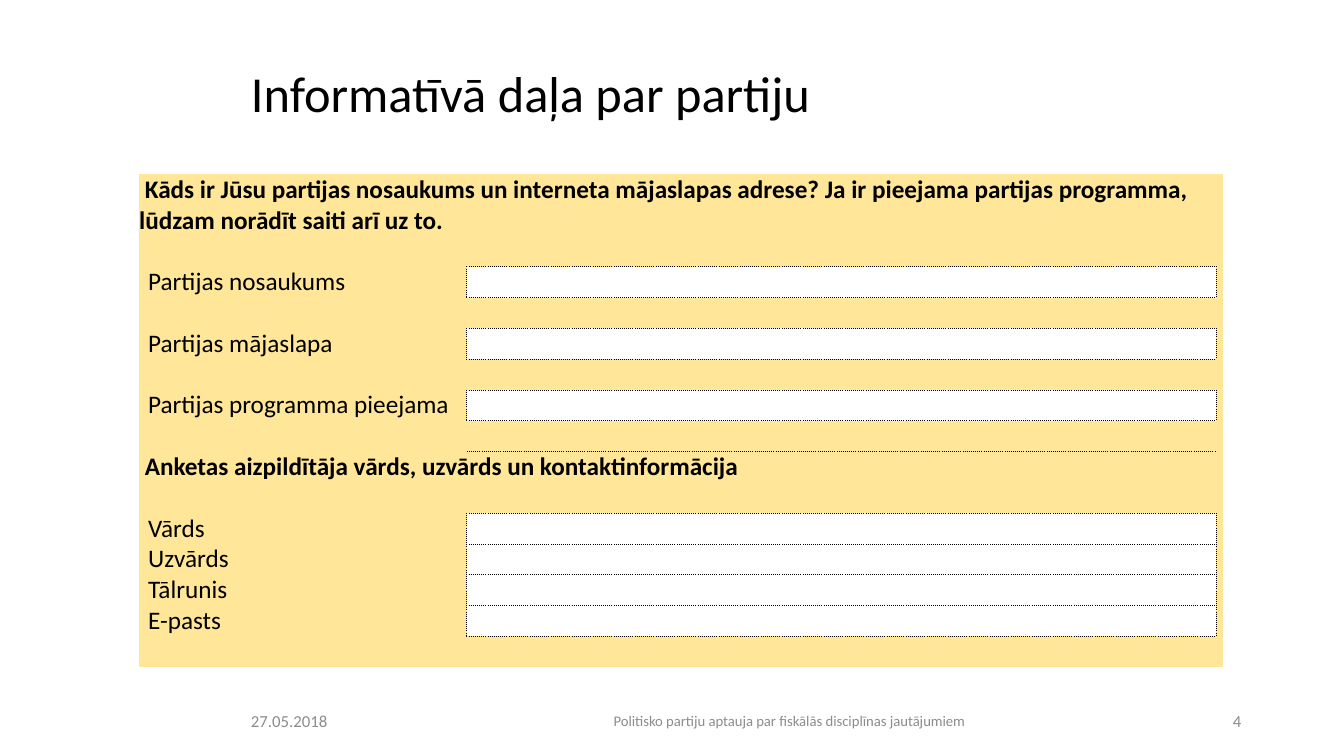
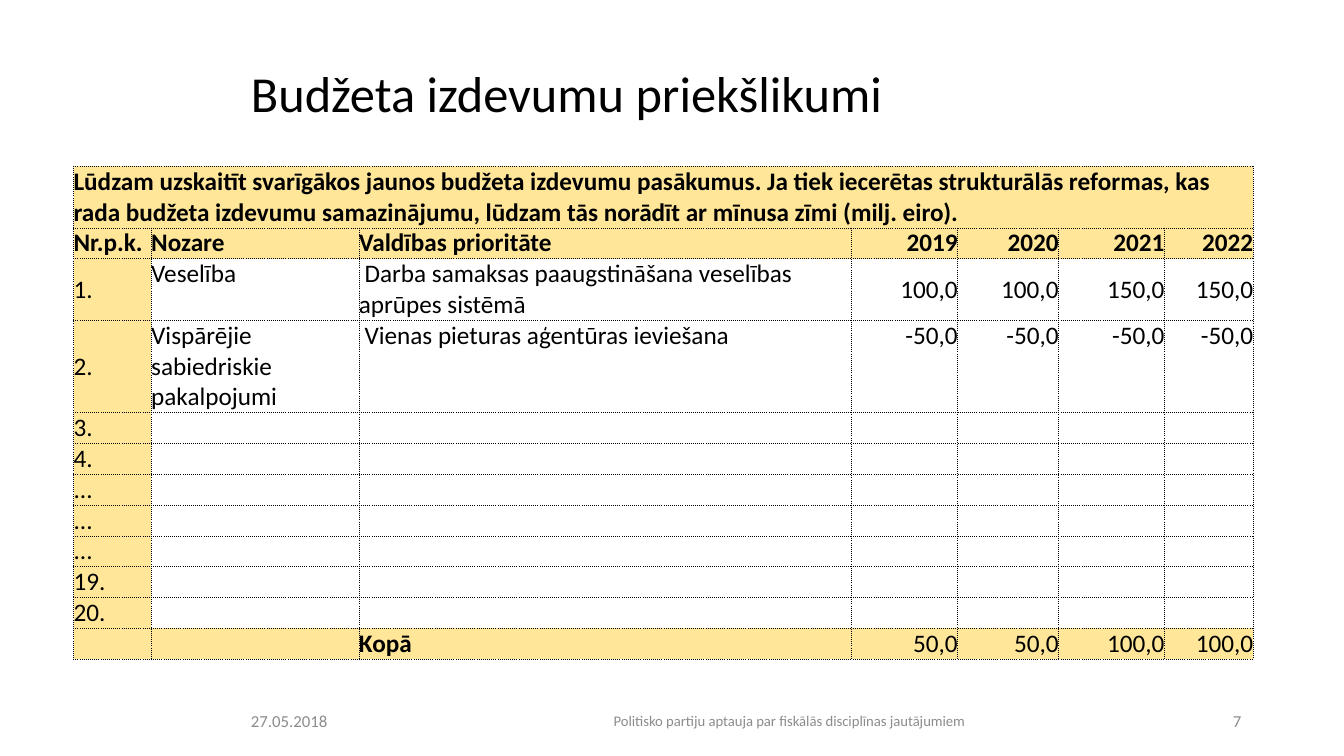
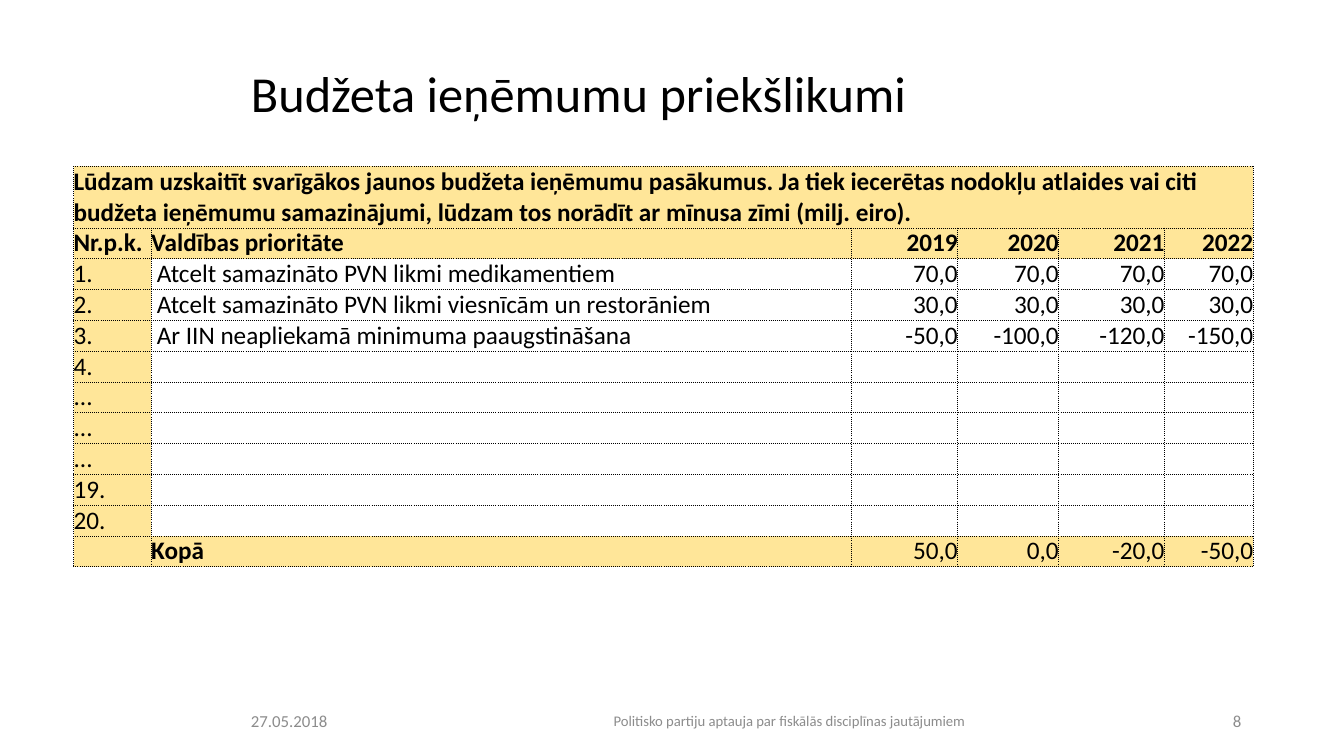
import pptx
import pptx.util
import pptx.dml.color
import pptx.enum.text
import pptx.oxml
import pptx.oxml.ns

Inches, Pt = pptx.util.Inches, pptx.util.Pt
ALIGN, ANCHOR = pptx.enum.text.PP_ALIGN, pptx.enum.text.MSO_ANCHOR

# Shared look
FONT, INK, GREY, SAND = "Calibri", "000000", "8C8C8C", "FFE699"
LINE = Pt(22)  # height of one line of table text
NO_STYLE = "{2D5ABB26-0587-4C30-8999-92F81FD0307C}"
SIDES = {"L": (0, -1), "R": (0, 1), "T": (-1, 0), "B": (1, 0)}
DATE = "27.05.2018"
FOOTER = "Politisko partiju aptauja par fiskālās disciplīnas jautājumiem"

# Form rows: (kind, text, lines)
FORM_TITLE = "Informatīvā daļa par partiju"
FORM_COLS = [3.25, 7.43, 0.07]
GAP = ("gap", "", 1)
FORM_ROWS = [
    ("heading", " Kāds ir Jūsu partijas nosaukums un interneta mājaslapas adrese? "
     "Ja ir pieejama partijas programma, lūdzam norādīt saiti arī uz to.", 2),
    GAP, ("field", "Partijas nosaukums", 1),
    GAP, ("field", "Partijas mājaslapa", 1),
    GAP, ("field", "Partijas programma pieejama", 1),
    GAP, ("heading", " Anketas aizpildītāja vārds, uzvārds un kontaktinformācija", 1),
    GAP, ("field", "Vārds", 1), ("field", "Uzvārds", 1),
    ("field", "Tālrunis", 1), ("field", "E-pasts", 1), GAP,
]

# Budget tables; items: (labels, yearly amounts, anchor of amounts, lines)
YEARS = ["2019", "2020", "2021", "2022"]
YEAR_COLS = [1.06, 1, 1.05, 0.88]
NUMBER_COL = 0.77
NUMBERS = ["1.", "2.", "3.", "4.", "...", "...", "...", "19.", "20."]
BUDGETS = [
    dict(
        title="Budžeta izdevumu priekšlikumi", page=7,
        question="Lūdzam uzskaitīt svarīgākos jaunos budžeta izdevumu pasākumus. "
                 "Ja tiek iecerētas strukturālās reformas, kas rada budžeta izdevumu "
                 "samazinājumu, lūdzam tās norādīt ar mīnusa zīmi (milj. eiro).",
        labels=["Nozare", "Valdības prioritāte"], label_cols=[2.06, 4.88],
        items=[
            (["Veselība", " Darba samaksas paaugstināšana veselības aprūpes sistēmā"],
             [100, 100, 150, 150], ANCHOR.MIDDLE, 2),
            (["Vispārējie sabiedriskie pakalpojumi", " Vienas pieturas aģentūras ieviešana"],
             [-50, -50, -50, -50], ANCHOR.TOP, 3),
        ]),
    dict(
        title="Budžeta ieņēmumu priekšlikumi", page=8,
        question="Lūdzam uzskaitīt svarīgākos jaunos budžeta ieņēmumu pasākumus. "
                 "Ja tiek iecerētas nodokļu atlaides vai citi budžeta ieņēmumu "
                 "samazinājumi, lūdzam tos norādīt ar mīnusa zīmi (milj. eiro).",
        labels=["Valdības prioritāte"], label_cols=[6.94],
        items=[
            ([" Atcelt samazināto PVN likmi medikamentiem"], [70, 70, 70, 70], ANCHOR.MIDDLE, 1),
            ([" Atcelt samazināto PVN likmi viesnīcām un restorāniem"], [30, 30, 30, 30],
             ANCHOR.MIDDLE, 1),
            ([" Ar IIN neapliekamā minimuma paaugstināšana"], [-50, -100, -120, -150],
             ANCHOR.MIDDLE, 1),
        ]),
]


def rgb(color):
    return pptx.dml.color.RGBColor.from_string(color)


def style(p, size, color=INK, bold=False, align=ALIGN.LEFT):
    p.alignment = align
    p.font.name, p.font.size, p.font.bold = FONT, Pt(size), bold
    p.font.color.rgb = rgb(color)


def add_text(s, box, text, size, color=INK, align=ALIGN.LEFT):
    tf = s.shapes.add_textbox(*map(Inches, box)).text_frame
    tf.word_wrap, tf.vertical_anchor = True, ANCHOR.MIDDLE
    p = tf.paragraphs[0]
    p.text = text
    style(p, size, color, align=align)
    return p


def new_slide(prs, title, page):
    s = prs.slides.add_slide(prs.slide_layouts[6])
    add_text(s, (2.39, 0.4, 10.02, 1.11), title, 36).line_spacing = 0.9
    add_text(s, (2.39, 6.95, 1.64, 0.4), DATE, 12, GREY)
    add_text(s, (4.31, 6.95, 7.04, 0.4), FOOTER, 10.5, GREY, ALIGN.CENTER)
    add_text(s, (11.62, 6.95, 0.79, 0.4), str(page), 12, GREY, ALIGN.RIGHT)
    return s


def new_table(s, left, top, cols, lines):
    frame = s.shapes.add_table(len(lines), len(cols), Inches(left), Inches(top),
                               Inches(sum(cols)), LINE * sum(lines))
    frame.element.find(".//" + pptx.oxml.ns.qn("a:tableStyleId")).text = NO_STYLE
    table = frame.table
    table.first_row = table.horz_banding = False
    for column, width in zip(table.columns, cols):
        column.width = Inches(width)
    for row, count in zip(table.rows, lines):
        row.height = LINE * count
    return table


def set_cell(cell, text="", filled=True, sides="LRTB", bold=False, align=ALIGN.LEFT,
             anchor=ANCHOR.MIDDLE, indent=0):
    cell.margin_left = Inches(indent)
    cell.margin_right = cell.margin_top = cell.margin_bottom = 0
    cell.vertical_anchor = anchor
    cell.text = text
    style(cell.text_frame.paragraphs[0], 18, bold=bold, align=align)
    if filled:
        cell.fill.solid()
        cell.fill.fore_color.rgb = rgb(SAND)
    else:
        cell.fill.background()
    # Dotted borders go before the fill
    tc_pr = cell._tc.get_or_add_tcPr()
    for i, side in enumerate(sides):
        tc_pr.insert(i, pptx.oxml.parse_xml(
            f'<a:ln{side} {pptx.oxml.ns.nsdecls("a")} w="{Pt(0.5)}"><a:solidFill>'
            f'<a:srgbClr val="{INK}"/></a:solidFill><a:prstDash val="sysDot"/></a:ln{side}>'))


def form_slide(prs):
    s = new_slide(prs, FORM_TITLE, 4)
    table = new_table(s, 1.38, 1.73, FORM_COLS, [lines for _, _, lines in FORM_ROWS])
    fields = {(r, 1) for r, row in enumerate(FORM_ROWS) if row[0] == "field"}
    for r, (kind, text, _) in enumerate(FORM_ROWS):
        heading = kind == "heading"
        for c in range(len(FORM_COLS)):
            # A side is drawn where this cell or its neighbour is a field
            sides = [side for side, (dr, dc) in SIDES.items()
                     if fields & {(r, c), (r + dr, c + dc)}]
            set_cell(table.cell(r, c), text if c == 0 else "", (r, c) not in fields, sides,
                     bold=heading, indent=0.09 if kind == "field" and c == 0 else 0)
        if heading:
            table.cell(r, 0).merge(table.cell(r, len(FORM_COLS) - 1))


def amount(value):
    return f"{value:.1f}".replace(".", ",")


def budget_slide(prs, title, page, question, labels, label_cols, items):
    s = new_slide(prs, title, page)
    cols = [NUMBER_COL] + label_cols + YEAR_COLS
    first_year = 1 + len(labels)
    blank = ([""] * len(labels), [], ANCHOR.MIDDLE, 1)
    body = items + [blank] * (len(NUMBERS) - len(items))
    table = new_table(s, 0.73, 1.65, cols, [2, 1] + [item[3] for item in body] + [1])

    # Question and header
    for c, text in enumerate(["Nr.p.k."] + labels + YEARS):
        set_cell(table.cell(0, c), question if c == 0 else "", bold=True)
        set_cell(table.cell(1, c), text, bold=True,
                 align=ALIGN.RIGHT if c >= first_year else ALIGN.LEFT)
    table.cell(0, 0).merge(table.cell(0, len(cols) - 1))

    # Numbered measures
    for r, (number, (names, values, anchor, _)) in enumerate(zip(NUMBERS, body), 2):
        set_cell(table.cell(r, 0), number)
        for c, name in enumerate(names, 1):
            set_cell(table.cell(r, c), name, False, anchor=ANCHOR.TOP)
        for c, text in enumerate(map(amount, values) if values else [""] * len(YEARS), first_year):
            set_cell(table.cell(r, c), text, False, align=ALIGN.RIGHT, anchor=anchor)

    # Totals
    last = len(body) + 2
    for c in range(first_year):
        set_cell(table.cell(last, c), "Kopā" if c == first_year - 1 else "", bold=True)
    for c, values in enumerate(zip(*(item[1] for item in items)), first_year):
        set_cell(table.cell(last, c), amount(sum(values)), align=ALIGN.RIGHT)


def main():
    prs = pptx.Presentation()
    prs.slide_width, prs.slide_height = Inches(13.33), Inches(7.5)
    form_slide(prs)
    for budget in BUDGETS:
        budget_slide(prs, **budget)
    prs.save("out.pptx")


if __name__ == "__main__":
    main()
